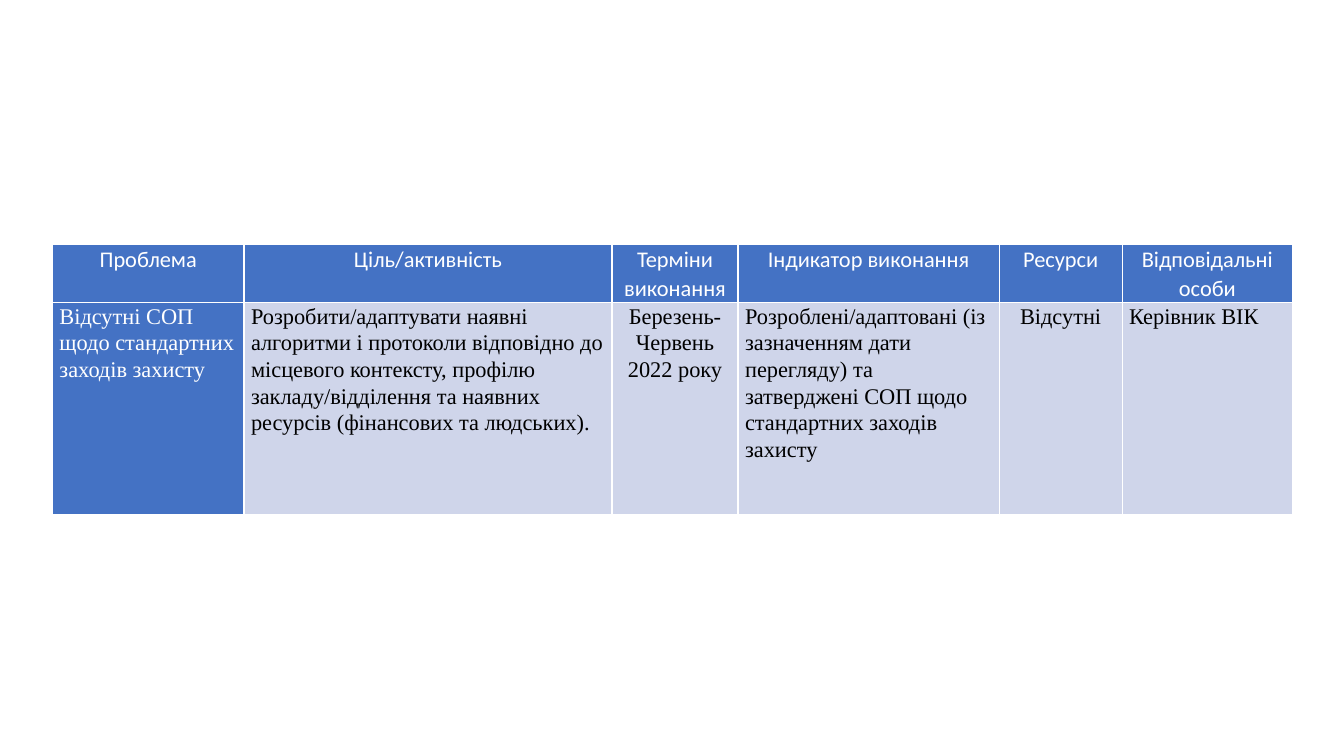
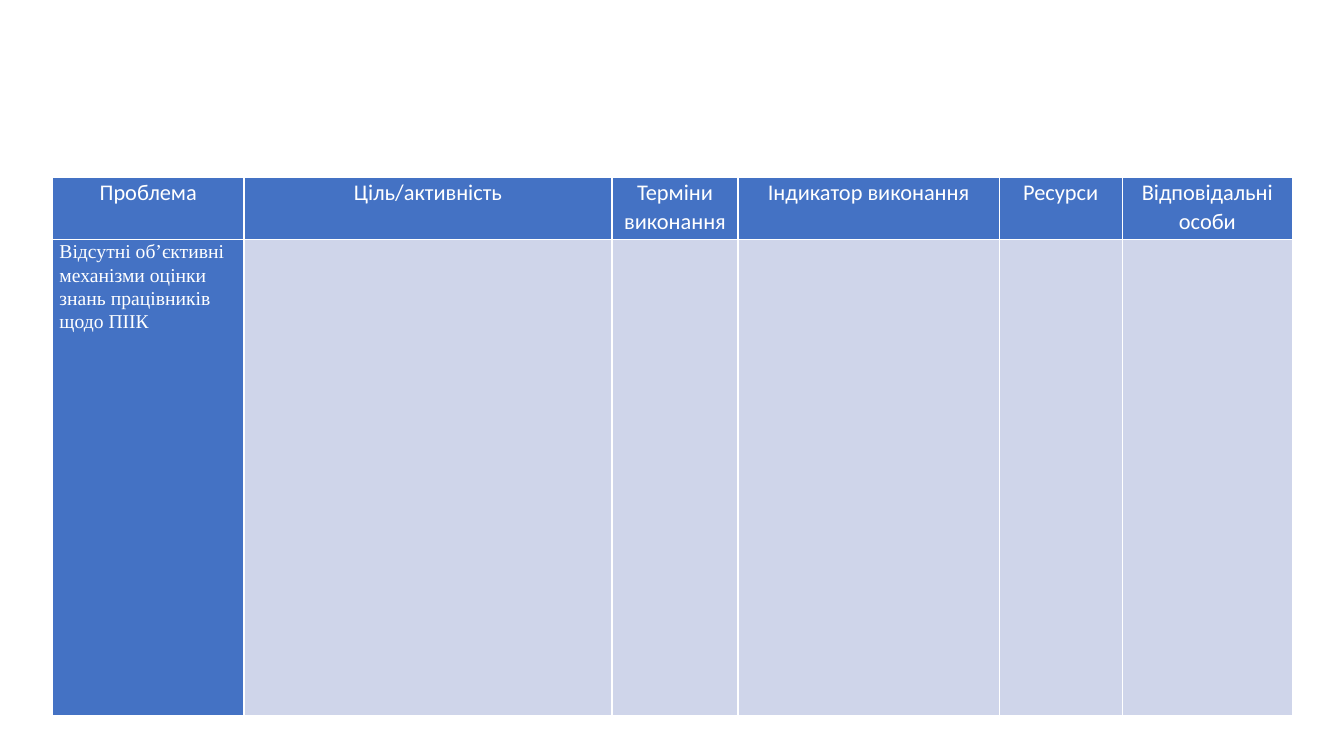
from dataclasses import dataclass

from lxml import etree
from pptx import Presentation
from pptx.dml.color import RGBColor
from pptx.enum.text import PP_ALIGN
from pptx.oxml.ns import qn
from pptx.presentation import Presentation as Deck
from pptx.table import _Cell
from pptx.util import Inches, Pt

LEFT, CENTER, JUSTIFY = PP_ALIGN.LEFT, PP_ALIGN.CENTER, PP_ALIGN.JUSTIFY

WHITE, BLACK, BLUE, PALE = "FFFFFF", "000000", "4472C4", "CFD5EA"
HEAD_FONT, BODY_FONT = "Calibri", "Times New Roman"
HEAD_SIZE = 16
TABLE_LEFT = 0.52
SIDE_MARGIN = 0.07
BORDER_WIDTH = 1


@dataclass(frozen=True)
class Column:
    title: str
    width: float
    align: PP_ALIGN


@dataclass(frozen=True)
class Plan:
    top: float
    head_height: float
    body_height: float
    body_size: int
    entries: tuple[str, ...]


COLUMNS = (
    Column("Проблема", 1.9, LEFT),
    Column("Ціль/активність", 3.65, LEFT),
    Column("Терміни виконання", 1.25, CENTER),
    Column("Індикатор виконання", 2.59, LEFT),
    Column("Ресурси", 1.22, CENTER),
    Column("Відповідальні особи", 1.69, JUSTIFY),
)

PLANS = (
    Plan(2.42, 0.56, 2.1, 16, (
        "Відсутні СОП щодо стандартних заходів захисту",
        "Розробити/адаптувати наявні алгоритми і протоколи відповідно до "
        "місцевого контексту, профілю закладу/відділення та наявних ресурсів "
        "(фінансових та людських).",
        "Березень-Червень 2022 року",
        "Розроблені/адаптовані (із зазначенням дати перегляду) та затверджені "
        "СОП щодо стандартних заходів захисту",
        "Відсутні",
        "Керівник ВІК",
    )),
    Plan(1.76, 0.62, 4.72, 14, (
        "Відсутні об’єктивні механізми оцінки знань працівників щодо ПІІК",
        "", "", "", "", "",
    )),
)


def rgb(color: str) -> RGBColor:
    return RGBColor.from_string(color)


def add_borders(cell: _Cell, color: str) -> None:
    tc_pr = cell._tc.get_or_add_tcPr()
    for side in ("a:lnL", "a:lnR", "a:lnT", "a:lnB"):
        line = etree.SubElement(tc_pr, qn(side), w=str(Pt(BORDER_WIDTH)))
        fill = etree.SubElement(line, qn("a:solidFill"))
        etree.SubElement(fill, qn("a:srgbClr"), val=color)


def fill_cell(cell: _Cell, text: str, align: PP_ALIGN, font: str, size: int,
              color: str, background: str) -> None:
    add_borders(cell, WHITE)
    cell.fill.solid()
    cell.fill.fore_color.rgb = rgb(background)
    cell.margin_left = cell.margin_right = Inches(SIDE_MARGIN)
    cell.margin_top = cell.margin_bottom = 0
    if not text:
        return
    cell.text_frame.text = text
    p = cell.text_frame.paragraphs[0]
    p.alignment = align
    p.line_spacing = 1.07
    p.space_after = Pt(8)
    r = p.runs[0]
    r.font.name = font
    r.font.size = Pt(size)
    r.font.bold = False
    r.font.color.rgb = rgb(color)


def add_plan(prs: Deck, plan: Plan) -> None:
    s = prs.slides.add_slide(prs.slide_layouts[6])
    width = sum(column.width for column in COLUMNS)
    table = s.shapes.add_table(
        2, len(COLUMNS), Inches(TABLE_LEFT), Inches(plan.top), Inches(width),
        Inches(plan.head_height + plan.body_height)).table
    table.rows[0].height = Inches(plan.head_height)
    table.rows[1].height = Inches(plan.body_height)
    for i, (column, entry) in enumerate(zip(COLUMNS, plan.entries)):
        table.columns[i].width = Inches(column.width)
        fill_cell(table.cell(0, i), column.title, CENTER, HEAD_FONT, HEAD_SIZE,
                  WHITE, BLUE)
        color, background = (WHITE, BLUE) if i == 0 else (BLACK, PALE)
        fill_cell(table.cell(1, i), entry, column.align, BODY_FONT,
                  plan.body_size, color, background)


def main() -> None:
    prs = Presentation()
    prs.slide_width, prs.slide_height = Inches(13.33), Inches(7.5)
    for plan in PLANS:
        add_plan(prs, plan)
    prs.save("out.pptx")


if __name__ == "__main__":
    main()
